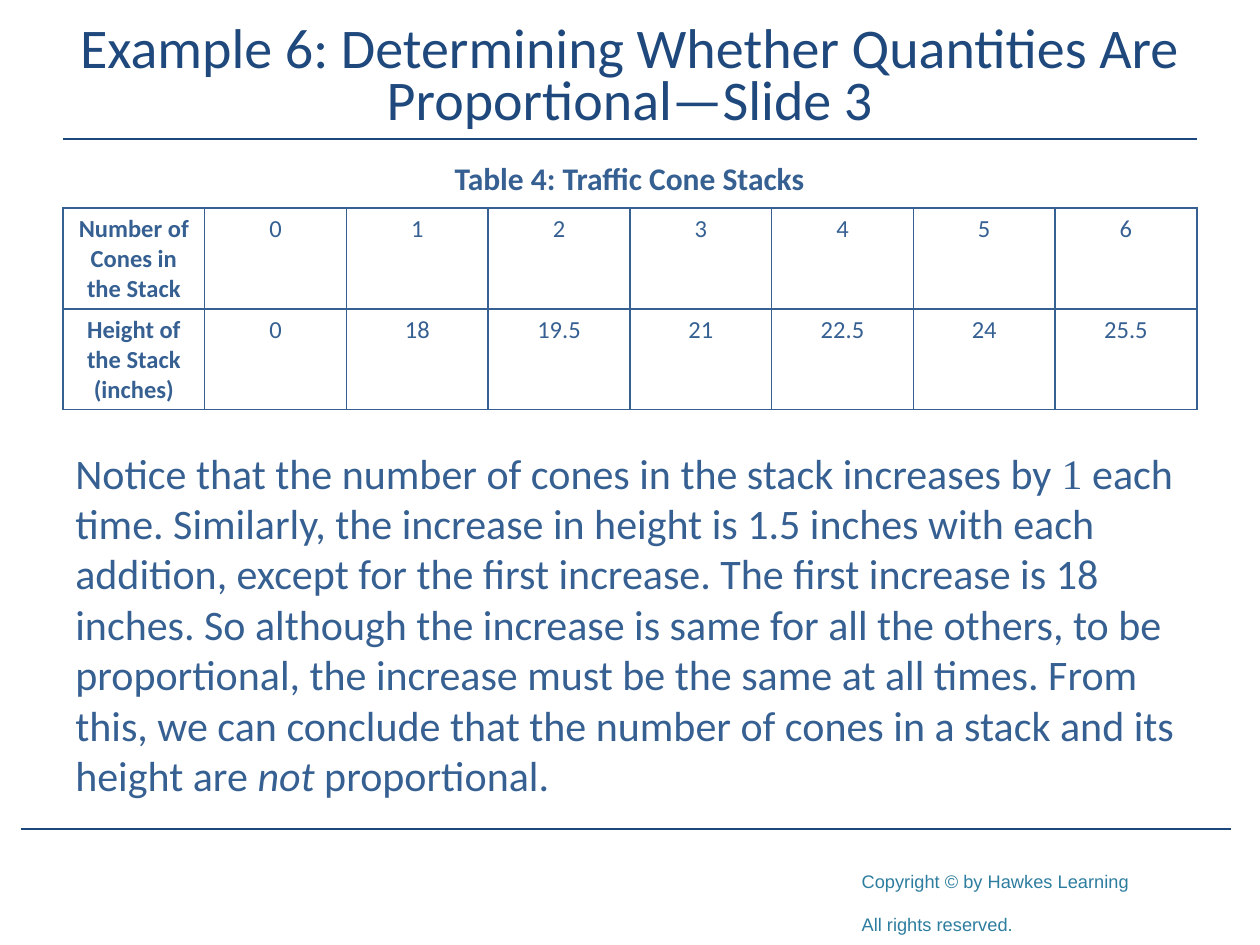
from dataclasses import dataclass

from lxml import etree
from pptx import Presentation
from pptx.dml.color import RGBColor
from pptx.enum.shapes import MSO_CONNECTOR
from pptx.enum.text import MSO_ANCHOR, MSO_AUTO_SIZE, PP_ALIGN
from pptx.oxml.ns import qn
from pptx.util import Pt

LINE = MSO_CONNECTOR.STRAIGHT
TOP, MIDDLE = MSO_ANCHOR.TOP, MSO_ANCHOR.MIDDLE
GROW, FIXED = MSO_AUTO_SIZE.SHAPE_TO_FIT_TEXT, MSO_AUTO_SIZE.NONE
LEFT, CENTER = PP_ALIGN.LEFT, PP_ALIGN.CENTER


@dataclass(frozen=True)
class Theme:
    title: str = "1F497D"
    rule: str = "1C477D"
    body: str = "366092"
    credit: str = "2D7D9F"
    white: str = "FFFFFF"
    font: str = "Calibri"
    serif: str = "Times New Roman"
    sans: str = "Arial"
    head: int = 32
    text: int = 24
    note: int = 18
    cell: int = 14


@dataclass(frozen=True)
class Rule:
    left: float
    right: float
    top: float


@dataclass(frozen=True)
class Box:
    left: float
    top: float
    width: float
    height: float


LOOK = Theme()
RULES = [Rule(36, 684, 79.2), Rule(12.24, 703.44, 473.76)]
HEAD = Box(36, 9.36, 648, 72)
LABEL = Box(252.72, 87.12, 216, 28.8)
GRID = Box(36, 118.8, 648, 115.2)
BODY = Box(36, 252, 648, 210.96)
CREDIT = Box(485.28, 460.8, 221.76, 51.12)
ROWS = [
    ["Number of Cones in the Stack", "0", "1", "2", "3", "4", "5", "6"],
    ["Height of the Stack (inches)", "0", "18", "19.5", "21", "22.5", "24", "25.5"],
]
STORY = [
    ("Notice that the number of cones in the stack increases by ", {}),
    ("1", {"face": LOOK.serif}),
    (" each time. Similarly, the increase in height is 1.5 inches with each "
     "addition, except for the first increase. The first increase is 18 inches. "
     "So although the increase is same for all the others, to be proportional, "
     "the increase must be the same at all times. From this, we can conclude "
     "that the number of cones in a stack and its height are ", {}),
    ("not", {"italic": True}),
    (" proportional.", {}),
]


def write(para, text: str, *, size: int = LOOK.text, face: str = LOOK.font,
          color: str = LOOK.body, bold: bool = False, italic: bool = False,
          align=LEFT, shift: int = 0) -> None:
    para.alignment = align
    run = para.add_run()
    run.text = text
    font = run.font
    font.size, font.name = Pt(size), face
    font.bold, font.italic = bold, italic
    font.color.rgb = RGBColor.from_string(color)
    if shift:
        run._r.get_or_add_rPr().set("baseline", str(shift * 1000))


def add_box(slide, box: Box, anchor=TOP, fit=GROW):
    shape = slide.shapes.add_textbox(
        Pt(box.left), Pt(box.top), Pt(box.width), Pt(box.height))
    frame = shape.text_frame
    frame.word_wrap = True
    frame.auto_size = fit
    frame.vertical_anchor = anchor
    return shape


def add_rule(slide, rule: Rule) -> None:
    line = slide.shapes.add_connector(
        LINE, Pt(rule.left), Pt(rule.top), Pt(rule.right), Pt(rule.top))
    line.line.color.rgb = RGBColor.from_string(LOOK.rule)
    line.line.width = Pt(1.25)
    etree.SubElement(line._element.spPr, qn("a:effectLst"))


def add_edges(cell) -> None:
    props = cell._tc.get_or_add_tcPr()
    for side in ("lnL", "lnR", "lnT", "lnB"):
        edge = etree.SubElement(props, qn(f"a:{side}"), w=str(Pt(1)))
        fill = etree.SubElement(edge, qn("a:solidFill"))
        etree.SubElement(fill, qn("a:srgbClr"), val=LOOK.body)


def add_grid(slide, box: Box, rows: list[list[str]]) -> None:
    table = slide.shapes.add_table(
        len(rows), len(rows[0]), Pt(box.left), Pt(box.top),
        Pt(box.width), Pt(box.height)).table
    table.first_row = table.horz_banding = False
    for row, words in enumerate(rows):
        for col, word in enumerate(words):
            cell = table.cell(row, col)
            add_edges(cell)
            cell.fill.background()
            write(cell.text_frame.paragraphs[0], word, size=LOOK.cell,
                  bold=col == 0, align=CENTER)


def add_credit(slide) -> None:
    shape = add_box(slide, CREDIT)
    shape.fill.solid()
    shape.fill.fore_color.rgb = RGBColor.from_string(LOOK.white)
    frame = shape.text_frame
    frame.margin_top = Pt(24.3)
    style = dict(size=LOOK.note, face=LOOK.sans, color=LOOK.credit, shift=-25)
    write(frame.paragraphs[0], "Copyright © by Hawkes Learning", **style)
    write(frame.add_paragraph(), "All rights reserved.", **style)


def main() -> None:
    deck = Presentation()
    deck.slide_width, deck.slide_height = Pt(720), Pt(540)
    slide = deck.slides.add_slide(deck.slide_layouts[6])
    add_credit(slide)
    for rule in RULES:
        add_rule(slide, rule)
    head = add_box(slide, HEAD, MIDDLE, FIXED).text_frame.paragraphs[0]
    head.line_spacing = Pt(30)
    write(head, "Example 6: Determining Whether Quantities Are Proportional—Slide 3",
          size=LOOK.head, color=LOOK.title, align=CENTER)
    label = add_box(slide, LABEL).text_frame.paragraphs[0]
    write(label, "Table 4: Traffic Cone Stacks", size=LOOK.note, bold=True)
    add_grid(slide, GRID, ROWS)
    body = add_box(slide, BODY).text_frame.paragraphs[0]
    for text, style in STORY:
        write(body, text, **style)
    deck.save("out.pptx")


if __name__ == "__main__":
    main()
